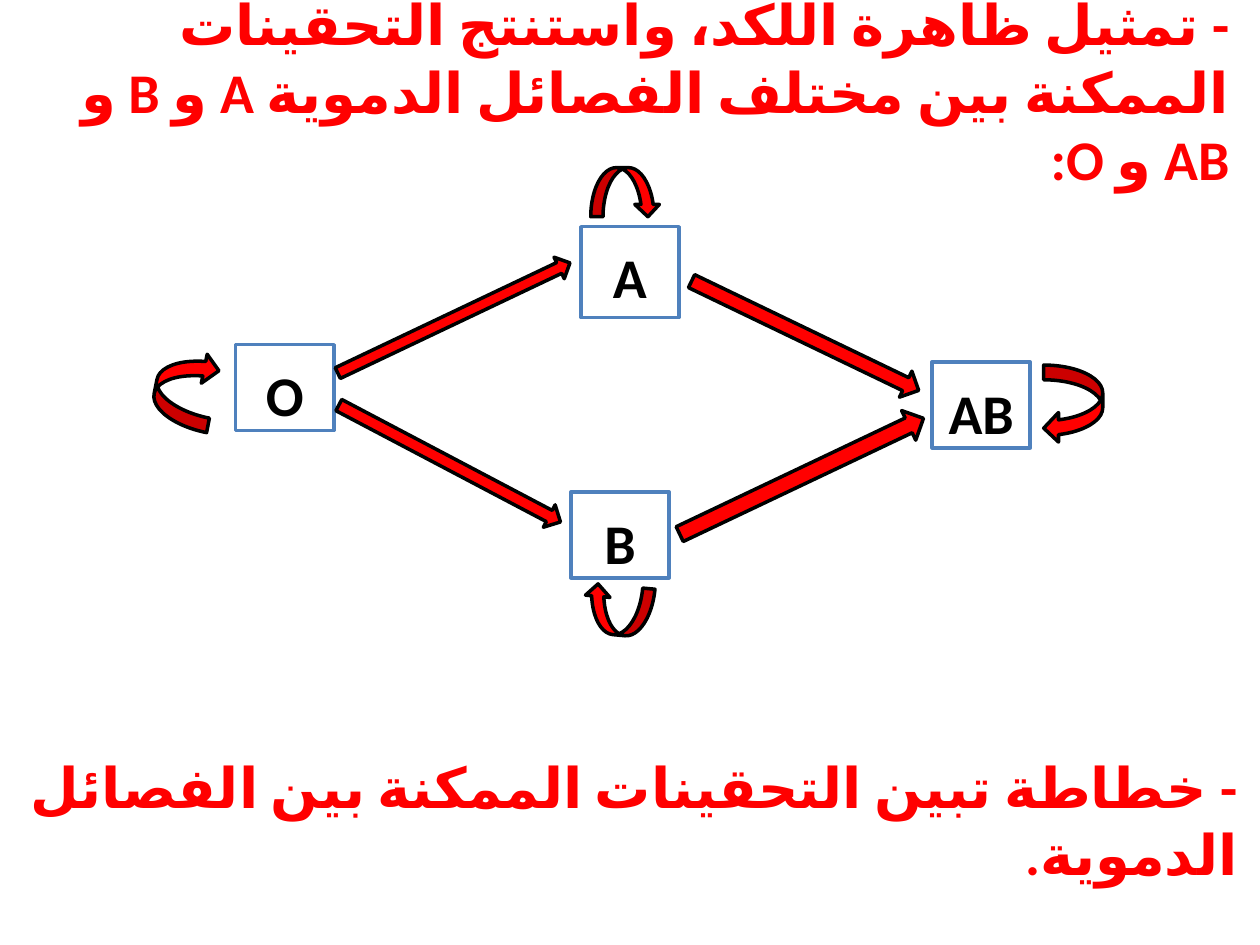
from collections import namedtuple

from pptx import Presentation
from pptx.dml.color import RGBColor
from pptx.enum.lang import MSO_LANGUAGE_ID
from pptx.enum.shapes import MSO_SHAPE
from pptx.enum.text import MSO_ANCHOR, MSO_AUTO_SIZE, PP_ALIGN
from pptx.oxml import parse_xml
from pptx.oxml.ns import nsdecls
from pptx.util import Cm, Pt

Box = namedtuple("Box", "left top width height")
FONT = "Calibri"
RED, BLACK, WHITE, BLUE = "FF0000", "000000", "FFFFFF", "4F81BD"

GROUPS = [
    ("O", Box(2.25, 3.95, 1.98, 1.73)),
    ("A", Box(9.21, 1.57, 1.98, 1.83)),
    ("B", Box(9.01, 6.92, 1.98, 1.73)),
    ("AB", Box(16.29, 4.3, 1.98, 1.73)),
]
SELF_DONATIONS = [
    (Box(0.45, 4.24, 1.57, 1.19), 281.3),
    (Box(9.41, 0.38, 1.4, 0.99), 0),
    (Box(9.26, 8.81, 1.4, 0.99), 185.3),
    (Box(18.35, 4.55, 1.57, 1.19), 90),
]
DONATIONS = [
    (Box(4.06, 3.17, 5.18, 0.48), 334.6),
    (Box(4.04, 6.09, 5.05, 0.51), 27.8),
    (Box(11.19, 3.48, 5.08, 0.58), 25.7),
    (Box(10.94, 6.27, 5.44, 0.66), 334.6),
]


def color(value):
    """Turn a hex string into a colour."""
    return RGBColor.from_string(value)


def lengths(box):
    """Give the four measures of a box as lengths."""
    return [Cm(value) for value in box]


def write(shape, text, ink, align, anchor=MSO_ANCHOR.TOP):
    """Write one bold right-to-left paragraph in a shape."""
    frame = shape.text_frame
    frame.word_wrap = True
    frame.auto_size = MSO_AUTO_SIZE.NONE
    frame.vertical_anchor = anchor
    para = frame.paragraphs[0]
    para.alignment = align
    para._p.get_or_add_pPr().set("rtl", "1")
    span = para.add_run()
    span.text = text
    span.font.name = FONT
    span.font.size = Pt(32)
    span.font.bold = True
    span.font.language_id = MSO_LANGUAGE_ID.ARABIC_MOROCCO
    span.font.color.rgb = color(ink)
    complex_font = parse_xml(f'<a:cs {nsdecls("a")} typeface="{FONT}"/>')
    span.font._element.append(complex_font)
    return para


def add_figure(page, kind, box, fill, line, angle=0):
    """Add a flat filled shape with a 2 pt outline."""
    shape = page.shapes.add_shape(kind, *lengths(box))
    shape.shadow.inherit = False
    shape.fill.solid()
    shape.fill.fore_color.rgb = color(fill)
    shape.line.color.rgb = color(line)
    shape.line.width = Pt(2)
    shape.rotation = angle
    return shape


def add_heading(page, box, text):
    """Fill the title placeholder and place it in the box."""
    title = page.shapes.title
    title.left, title.top, title.width, title.height = lengths(box)
    write(title, text, RED, PP_ALIGN.RIGHT, MSO_ANCHOR.MIDDLE)


def add_diagram(page, box):
    """Draw the blood groups and the donations between them."""
    def inside(part):
        return part._replace(left=box.left + part.left, top=box.top + part.top)

    for name, part in GROUPS:
        square = add_figure(page, MSO_SHAPE.RECTANGLE, inside(part), WHITE, BLUE)
        para = write(square, name, BLACK, PP_ALIGN.CENTER)
        para.line_spacing = 1.15
        para.space_after = Pt(10)
    for kind, arrows in (
        (MSO_SHAPE.CURVED_DOWN_ARROW, SELF_DONATIONS),
        (MSO_SHAPE.RIGHT_ARROW, DONATIONS),
    ):
        for part, angle in arrows:
            add_figure(page, kind, inside(part), RED, BLACK, angle)


def add_caption(page, box, text):
    """Write the caption of the diagram."""
    caption = page.shapes.add_textbox(*lengths(box))
    write(caption, text, RED, PP_ALIGN.RIGHT)


def main():
    """Build the slide and save the deck."""
    deck = Presentation()
    deck.slide_width, deck.slide_height = Cm(25.4), Cm(19.05)
    page = deck.slides.add_slide(deck.slide_layouts[5])
    add_heading(
        page, Box(0, 0.33, 25.04, 3),
        "- تمثيل ظاهرة اللكد، واستنتج التحقينات الممكنة بين مختلف الفصائل الدموية A و B و AB و O:",
    )
    add_diagram(page, Box(2.5, 3, 20, 10))
    add_caption(
        page, Box(-0.2, 15.04, 25.4, 1.63),
        "- خطاطة تبين التحقينات الممكنة بين الفصائل الدموية. ",
    )
    deck.save("out.pptx")


if __name__ == "__main__":
    main()
